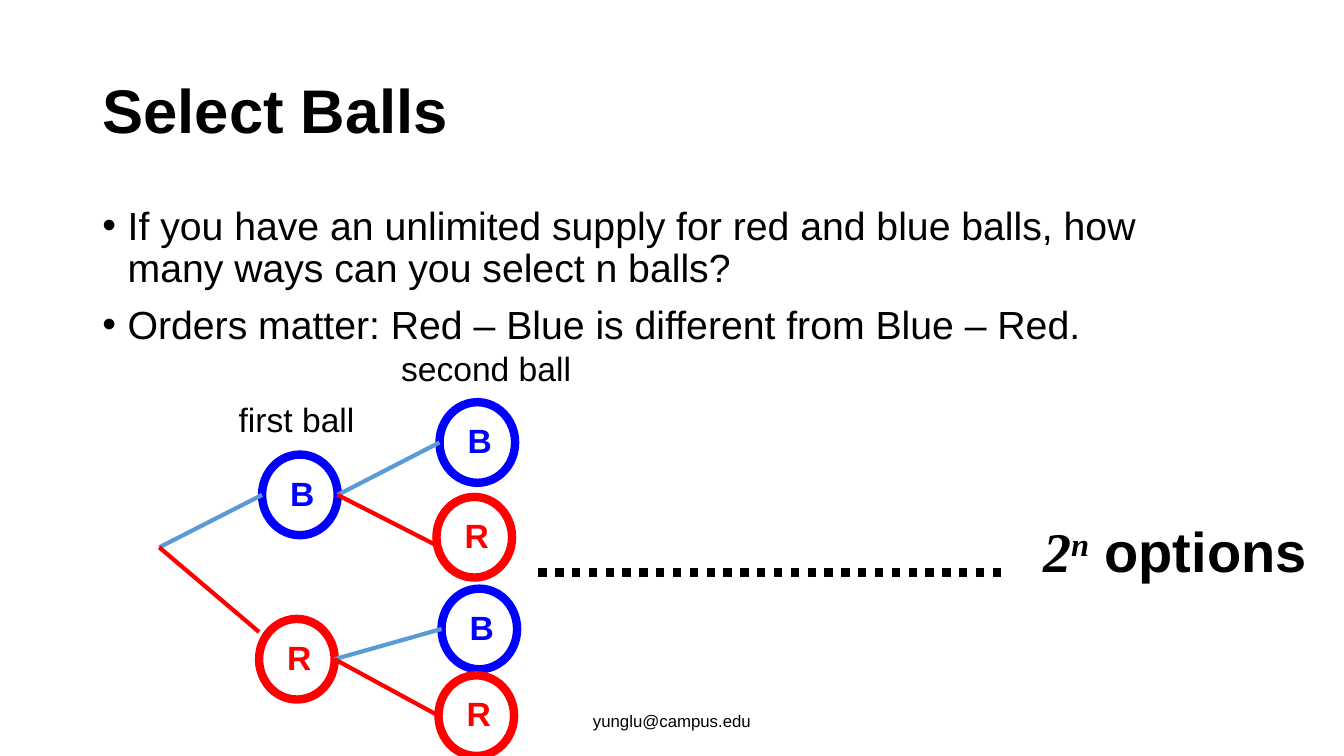
"""Build a slide with a two-level tree of ball selections."""
from lxml import etree
from pptx import Presentation
from pptx.dml.color import RGBColor
from pptx.enum.dml import MSO_LINE
from pptx.enum.shapes import MSO_CONNECTOR, MSO_SHAPE
from pptx.enum.text import MSO_ANCHOR, MSO_AUTO_SIZE, PP_ALIGN
from pptx.oxml.ns import qn
from pptx.util import Inches, Pt

STRAIGHT = MSO_CONNECTOR.STRAIGHT
OVAL = MSO_SHAPE.OVAL
DOTS = MSO_LINE.ROUND_DOT
MIDDLE = MSO_ANCHOR.MIDDLE
LEFT, CENTER = PP_ALIGN.LEFT, PP_ALIGN.CENTER
FIXED, GROW = MSO_AUTO_SIZE.NONE, MSO_AUTO_SIZE.SHAPE_TO_FIT_TEXT

COLORS = {"black": "000000", "B": "0000FF", "R": "FF0000", "B edge": "5B9BD5", "R edge": "FF0000"}
COLUMNS, ROWS = 160, 90
BALL_WIDTH, BALL_HEIGHT = 9, 9.6

deck = Presentation()
deck.slide_width, deck.slide_height = Inches(13.33), Inches(7.5)
column, row = deck.slide_width / COLUMNS, deck.slide_height / ROWS
page = deck.slides.add_slide(deck.slide_layouts[1])


def add_label(text, left, top, width, height, size=24, color="black", bold=False):
    """Add a one-line text box that fits its text."""
    box = page.shapes.add_textbox(*(round(n) for n in (left * column, top * row, width * column, height * row)))
    box.text_frame.word_wrap = False
    box.text_frame.auto_size = GROW
    para = box.text_frame.paragraphs[0]
    para.text = text
    para.font.name, para.font.size, para.font.bold = "Arial", Pt(size), bold
    para.font.color.rgb = RGBColor.from_string(COLORS[color])
    return box


def add_line(start, end, color, weight):
    """Add a straight line between two grid points."""
    points = [round(n * unit) for point in (start, end) for n, unit in zip(point, (column, row))]
    line = page.shapes.add_connector(STRAIGHT, *points)
    line.line.color.rgb = RGBColor.from_string(COLORS[color])
    line.line.width = Pt(weight)
    etree.SubElement(line._element.spPr, qn("a:effectLst"))
    return line


title, body = page.shapes.title, page.placeholders[1]
title.text = "Select Balls"
body.text = (
    "If you have an unlimited supply for red and blue balls, how many ways can you select n balls?\n"
    "Orders matter: Red – Blue is different from Blue – Red."
)
for holder, top, height, size, bold in ((title, 4.8, 17.4, 44, True), (body, 24, 57.12, 28, False)):
    holder.left, holder.width = round(11 * column), round(138 * column)
    holder.top, holder.height = round(top * row), round(height * row)
    holder.text_frame.auto_size = FIXED
    for para in holder.text_frame.paragraphs:
        para.alignment, para.line_spacing = LEFT, 0.9
        para.font.name, para.font.size, para.font.bold = "Arial", Pt(size), bold
        para.font.color.rgb = RGBColor.from_string(COLORS["black"])
title.text_frame.vertical_anchor = MIDDLE
for para in body.text_frame.paragraphs:
    para.space_before = Pt(10)
    indent = para._p.get_or_add_pPr()
    indent.set("marL", str(Inches(0.25)))
    indent.set("indent", str(-Inches(0.25)))

footer = add_label("yunglu@campus.edu", 53, 83.4, 54, 4.8, size=12)
footer.text_frame.word_wrap = True
footer.text_frame.auto_size = FIXED
footer.text_frame.vertical_anchor = MIDDLE
footer.text_frame.paragraphs[0].alignment = CENTER

add_label("first ball", 27.24, 46.92, 16.32, 6)
add_label("second ball", 46.56, 40.8, 22.92, 6)

root = (18.96, 65.16)
first_blue, first_red = (31.2, 54.12), (30.84, 73.68)
after_blue, after_red = ((left + BALL_WIDTH, top + BALL_HEIGHT / 2) for left, top in (first_blue, first_red))
tree = [
    ("B", first_blue, root, 0),
    ("R", first_red, root, -3.24),
    ("B", (52.32, 47.88), after_blue, 0),
    ("R", (51.96, 59.16), after_blue, 0.96),
    ("B", (52.56, 70.08), after_red, 0),
    ("R", (52.2, 80.4), after_red, 0),
]
for letter, (left, top), start, shift in tree:
    ball = page.shapes.add_shape(
        OVAL, round(left * column), round(top * row), round(BALL_WIDTH * column), round(BALL_HEIGHT * row)
    )
    ball.shadow.inherit = False
    ball.fill.background()
    ball.line.color.rgb = RGBColor.from_string(COLORS[letter])
    ball.line.width = Pt(6)
    add_label(letter, left + 2.16, top + 1.56, 5.4, 6, color=letter, bold=True)
    add_line(start, (left, top + BALL_HEIGHT / 2 + shift), f"{letter} edge", 3)

add_line((64.08, 68.16), (119.88, 68.16), "black", 6).line.dash_style = DOTS

options = add_label("", 123, 60.96, 34.44, 9.24, size=40, bold=True)
for text, font, italic, baseline in (
    ("2", "Times New Roman", True, 0),
    ("n", "Times New Roman", True, 30000),
    (" options", "Arial", False, 0),
):
    span = options.text_frame.paragraphs[0].add_run()
    span.text = text
    span.font.name, span.font.italic = font, italic
    span._r.get_or_add_rPr().set("baseline", str(baseline))

deck.save("out.pptx")
